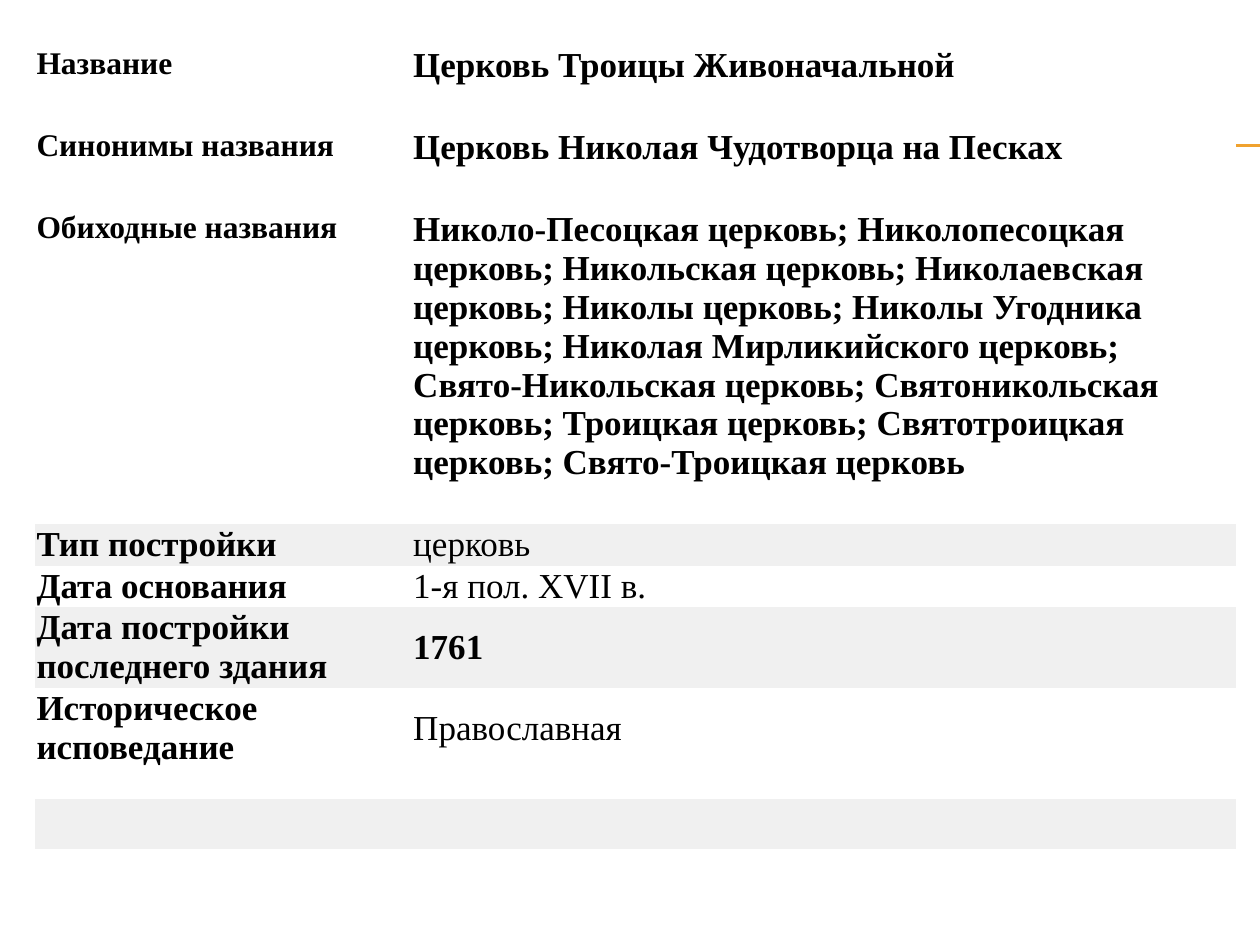
from dataclasses import dataclass

from lxml.etree import SubElement
from pptx import Presentation
from pptx.dml.color import RGBColor
from pptx.enum.shapes import MSO_CONNECTOR as Connector
from pptx.enum.text import MSO_ANCHOR as Anchor
from pptx.oxml.ns import qn
from pptx.util import Inches, Pt


@dataclass(frozen=True)
class Theme:
    font: str = "Times New Roman"
    text: RGBColor = RGBColor(0, 0, 0)
    plain: RGBColor = RGBColor(0xFF, 0xFF, 0xFF)
    band: RGBColor = RGBColor(0xF0, 0xF0, 0xF0)
    rule: RGBColor = RGBColor(0xF0, 0xA2, 0x2E)
    small: int = 18
    body: int = 20
    empty: int = 10


@dataclass(frozen=True)
class Row:
    height: float
    label: str = ""
    value: str = ""
    label_size: int = 20
    value_bold: bool = False
    value_anchor: Anchor = Anchor.MIDDLE
    banded: bool = False


THEME = Theme()
NO_STYLE = "{2D5ABB26-0587-4C30-8999-92F81FD0307C}"
COLUMN_WIDTHS = (2.99, 6.54)


def name_row(height: float, label: str, value: str) -> Row:
    return Row(height, label, value, THEME.small, True, Anchor.TOP)


ROWS = [
    name_row(0.65, "Название", "Церковь Троицы Живоначальной"),
    name_row(0.65, "Синонимы названия", "Церковь Николая Чудотворца на Песках"),
    name_row(
        2.5,
        "Обиходные названия",
        "Николо-Песоцкая церковь; Николопесоцкая церковь; Никольская церковь; "
        "Николаевская церковь; Николы церковь; Николы Угодника церковь; "
        "Николая Мирликийского церковь; Свято-Никольская церковь; "
        "Святоникольская церковь; Троицкая церковь; Святотроицкая церковь; "
        "Свято-Троицкая церковь",
    ),
    Row(0.33, "Тип постройки", "церковь", banded=True),
    Row(0.33, "Дата основания", "1-я пол. XVII в."),
    Row(0.64, "Дата постройки последнего здания", "1761", value_bold=True, banded=True),
    Row(0.64, "Историческое исповедание", "Православная"),
    Row(0.24),
    Row(0.4, banded=True),
    Row(0.43),
    Row(1.7),
    Row(0.77),
]


def draw_rule(slide, top: float) -> None:
    rule = slide.shapes.add_connector(
        Connector.STRAIGHT, Inches(0.56), Inches(top), Inches(10), Inches(top)
    )
    rule.line.color.rgb = THEME.rule
    rule.line.width = Pt(0.75)
    SubElement(rule._element.spPr, qn("a:effectLst"))


def fill_cell(cell, text: str, size: int, bold: bool, anchor: Anchor, color: RGBColor) -> None:
    cell.fill.solid()
    cell.fill.fore_color.rgb = color
    cell.margin_left = cell.margin_right = Inches(0.01)
    cell.margin_top = cell.margin_bottom = Inches(0.01)
    cell.vertical_anchor = anchor
    paragraph = cell.text_frame.paragraphs[0]
    if not text:
        SubElement(paragraph._p, qn("a:endParaRPr"), sz=str(THEME.empty * 100))
        return
    paragraph.text = text
    paragraph.font.name = THEME.font
    paragraph.font.size = Pt(size)
    paragraph.font.bold = bold
    paragraph.font.color.rgb = THEME.text


def draw_table(slide, rows: list[Row]) -> None:
    frame = slide.shapes.add_table(
        len(rows), len(COLUMN_WIDTHS), Inches(0.28), Inches(0.36),
        Inches(sum(COLUMN_WIDTHS)), Inches(sum(row.height for row in rows)),
    )
    table = frame.table
    table.first_row = table.horz_banding = False
    table._tbl.tblPr.find(qn("a:tableStyleId")).text = NO_STYLE
    for column, width in zip(table.columns, COLUMN_WIDTHS):
        column.width = Inches(width)
    for table_row, row in zip(table.rows, rows):
        table_row.height = Inches(row.height)
        color = THEME.band if row.banded else THEME.plain
        label, value = table_row.cells
        fill_cell(label, row.label, row.label_size, True, Anchor.TOP, color)
        fill_cell(value, row.value, THEME.body, row.value_bold, row.value_anchor, color)


def main() -> None:
    presentation = Presentation()
    presentation.slide_width = Inches(10)
    presentation.slide_height = Inches(7.5)
    slide = presentation.slides.add_slide(presentation.slide_layouts[6])
    for top in (1.15, 1.16):
        draw_rule(slide, top)
    draw_table(slide, ROWS)
    presentation.save("out.pptx")


if __name__ == "__main__":
    main()
